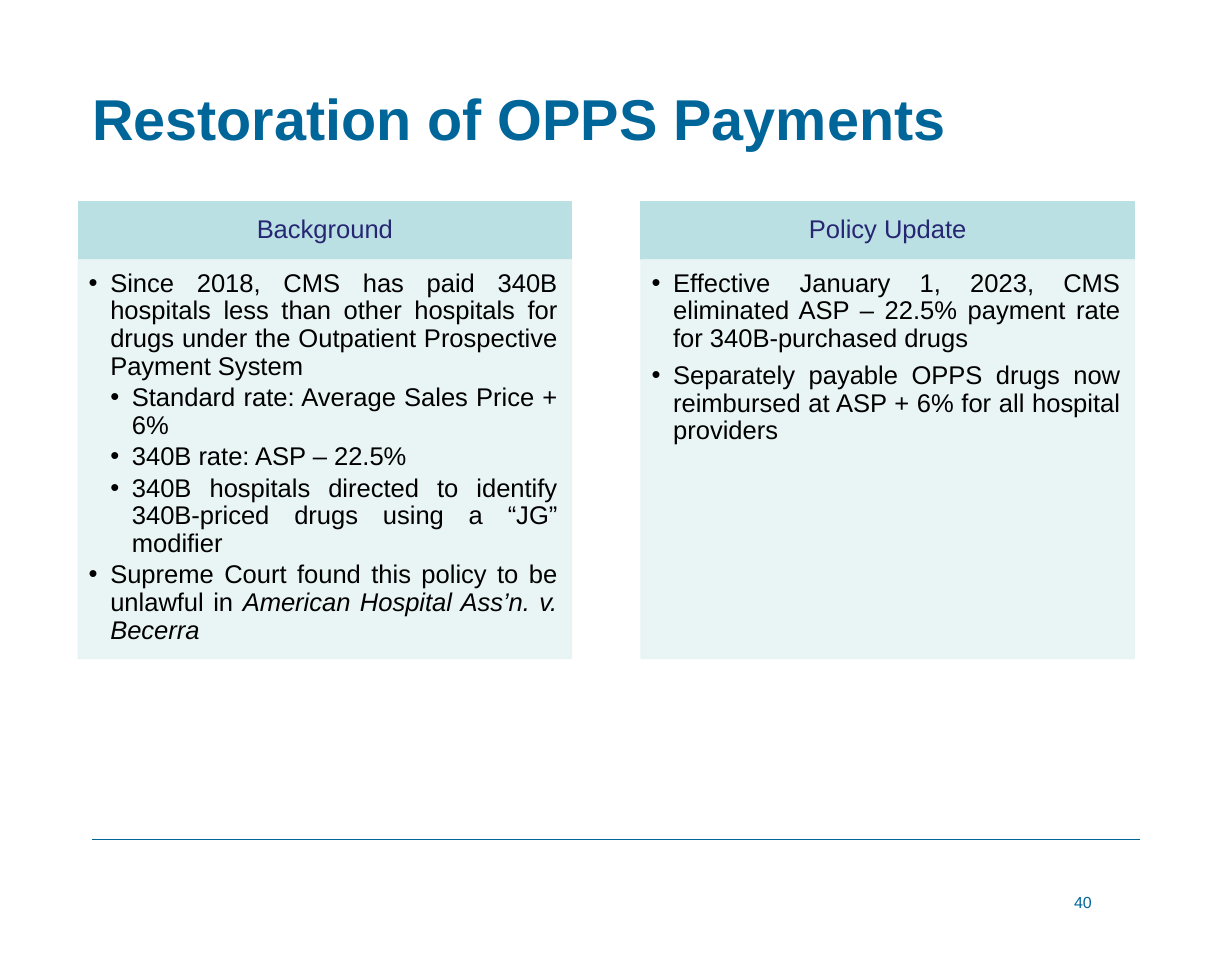
from dataclasses import dataclass

from lxml.etree import SubElement
from pptx import Presentation
from pptx.dml.color import RGBColor as RGB
from pptx.enum.shapes import MSO_CONNECTOR as CONNECTOR, MSO_SHAPE as SHAPE
from pptx.enum.text import MSO_ANCHOR as ANCHOR, PP_ALIGN as ALIGN
from pptx.oxml.ns import qn
from pptx.util import Pt


@dataclass(frozen=True)
class Theme:
    font: str = "Arial"
    blue: RGB = RGB(0x00, 0x66, 0x99)
    navy: RGB = RGB(0x26, 0x26, 0x73)
    black: RGB = RGB(0x00, 0x00, 0x00)
    header_fill: RGB = RGB(0xBB, 0xE0, 0xE3)
    body_fill: RGB = RGB(0xE7, 0xF3, 0xF4)
    title_size: int = 36
    text_size: int = 16
    number_size: int = 10


theme = Theme()


def set_frame(frame, anchor, margins):
    left, top, right, bottom = margins
    values = dict(word_wrap=True, vertical_anchor=anchor,
                  margin_left=Pt(left), margin_top=Pt(top),
                  margin_right=Pt(right), margin_bottom=Pt(bottom))
    for name, value in values.items():
        setattr(frame, name, value)


def write(paragraph, runs, size, color, **layout):
    for name, value in layout.items():
        setattr(paragraph, name, value)
    for text, style in runs:
        run = paragraph.add_run()
        run.text = text
        run.font.color.rgb = color
        for name, value in dict(name=theme.font, size=Pt(size), **style).items():
            setattr(run.font, name, value)


# Content: each point is its level and its runs
columns = [
    ("Background", [
        (0, [("Since 2018, CMS has paid 340B hospitals less than other hospitals "
              "for drugs under the Outpatient Prospective Payment System", {})]),
        (1, [("Standard rate: Average Sales Price + 6%", {})]),
        (1, [("340B rate: ASP – 22.5%", {})]),
        (1, [("340B hospitals directed to identify 340B-priced drugs "
              "using a “JG” modifier", {})]),
        (0, [("Supreme Court found this policy to be unlawful in ", {}),
             ("American Hospital Ass’n. v. Becerra", {"italic": True})]),
    ], 2.4),
    ("Policy Update", [
        (0, [("Effective January 1, 2023, CMS eliminated ASP – 22.5% payment rate "
              "for 340B-purchased drugs", {})]),
        (0, [("Separately payable OPPS drugs now reimbursed at ASP + 6% "
              "for all hospital providers", {})]),
    ], 6),
]

prs = Presentation()
prs.slide_width, prs.slide_height = Pt(770.4), Pt(597.6)
slide = prs.slides.add_slide(prs.slide_layouts[6])
shapes = slide.shapes

# Footer rule
rule = shapes.add_connector(CONNECTOR.STRAIGHT, Pt(57.6), Pt(524.9), Pt(712.8), Pt(524.9))
rule.line.color.rgb = theme.blue
rule.line.width = Pt(1)
SubElement(rule._element.spPr, qn("a:effectLst"))

# Title
title = shapes.add_textbox(Pt(57.6), Pt(0), Pt(655.2), Pt(106.6)).text_frame
set_frame(title, ANCHOR.BOTTOM, (0, 0, 0, 11.5))
write(title.paragraphs[0], [("Restoration of OPPS Payments", {"bold": True})],
      theme.title_size, theme.blue, line_spacing=Pt(38.9))

# Page number
number = shapes.add_textbox(Pt(596.9), Pt(554.4), Pt(160.6), Pt(31.7)).text_frame
set_frame(number, ANCHOR.TOP, (7.9, 3.6, 7.9, 3.6))
write(number.paragraphs[0], [("40", {})], theme.number_size, theme.blue,
      alignment=ALIGN.CENTER)

# Two columns, each a header above a body
column_left, column_pitch, column_width = 49, 352, 308.3
header_top, header_height, body_height = 126, 36.4, 249.2
indent = 13.5

for index, (heading, points, point_gap) in enumerate(columns):
    left = Pt(column_left + index * column_pitch)
    header = shapes.add_shape(SHAPE.RECTANGLE, left, Pt(header_top),
                              Pt(column_width), Pt(header_height))
    body = shapes.add_shape(SHAPE.RECTANGLE, left, Pt(header_top + header_height),
                            Pt(column_width), Pt(body_height))
    for panel, color in ((header, theme.header_fill), (body, theme.body_fill)):
        panel.shadow.inherit = False
        panel.fill.solid()
        panel.fill.fore_color.rgb = color
        panel.line.color.rgb = color
        panel.line.width = Pt(1)

    # Body fill and outline are 90% opaque
    for color in body._element.spPr.iter(qn("a:srgbClr")):
        SubElement(color, qn("a:alpha"), val="90000")

    set_frame(header.text_frame, ANCHOR.MIDDLE, (8.6, 5, 8.6, 5))
    write(header.text_frame.paragraphs[0], [(heading, {})], theme.text_size, theme.navy,
          alignment=ALIGN.CENTER, line_spacing=0.9)

    # Bulleted points
    set_frame(body.text_frame, ANCHOR.TOP, (6.5, 6.5, 8.6, 9))
    for order, (level, runs) in enumerate(points):
        point = body.text_frame.add_paragraph() if order else body.text_frame.paragraphs[0]
        properties = point._p.get_or_add_pPr()
        properties.set("marL", str(Pt(indent * (level + 1))))
        properties.set("indent", str(-Pt(indent)))
        SubElement(properties, qn("a:buFont"), typeface=theme.font)
        SubElement(properties, qn("a:buChar"), char="•")
        write(point, runs, theme.text_size, theme.black, level=level,
              alignment=ALIGN.JUSTIFY, line_spacing=0.9, space_after=Pt(point_gap))

prs.save("out.pptx")
